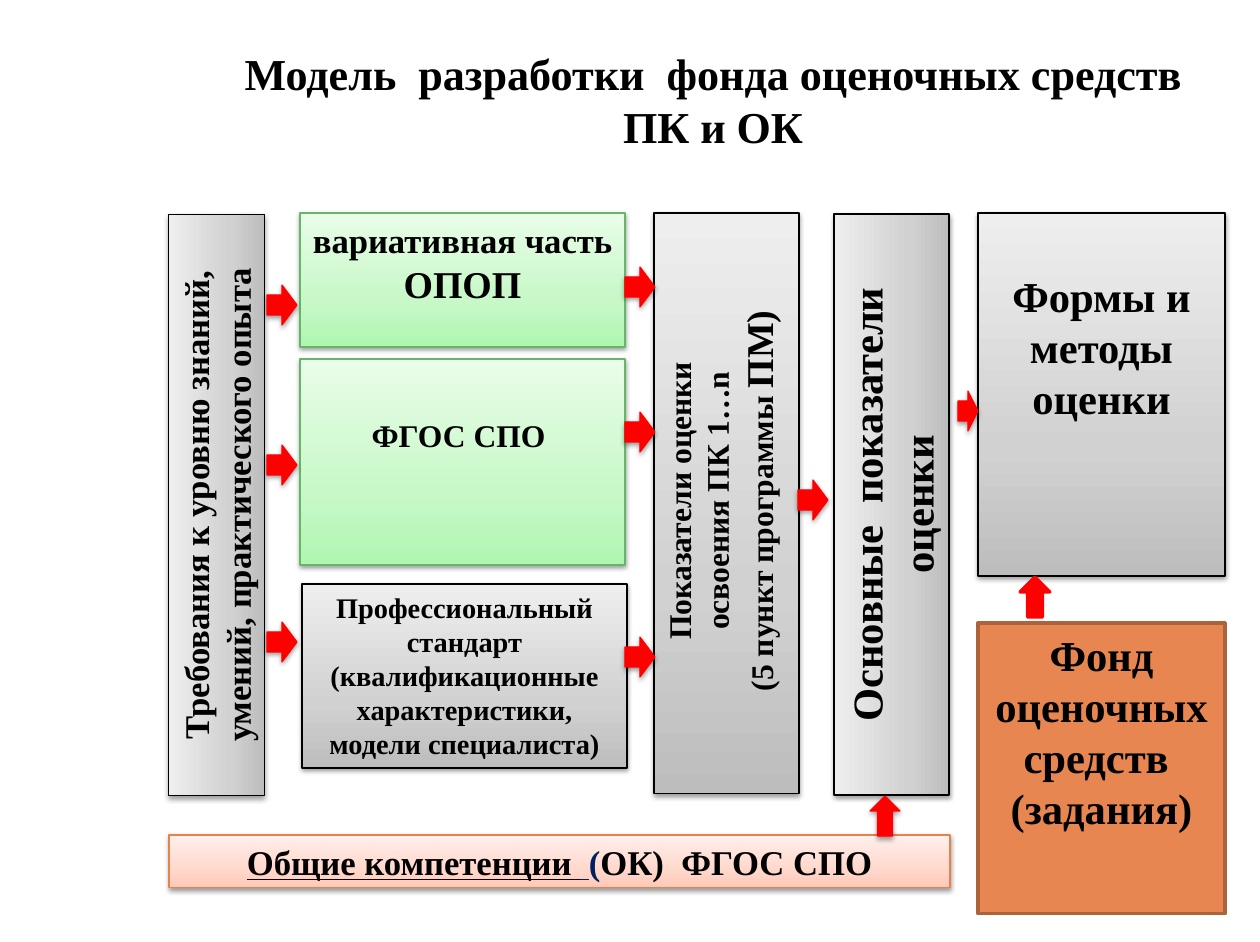
import copy

import pptx
import pptx.dml.color
import pptx.enum.shapes
import pptx.enum.text
import pptx.oxml
import pptx.oxml.ns
import pptx.util

PX = 8056
FONT = "Times New Roman"
COLORS = {
    "black": "000000", "navy": "002060", "red": "FF0000",
    "green line": "67B569", "peach line": "E7824C",
    "orange": "E88651", "orange line": "AC633C",
}
GRADIENTS = {
    "gray": ["BDBDBD", "D1D1D1", "EEEEEE"],
    "green": ["B0F6B1", "C8F8C8", "E9FDE9"],
    "peach": ["FFC8B7", "FFD8CC", "FFF0EC"],
}
SHADOW = (
    '<a:outerShdw xmlns:a="http://schemas.openxmlformats.org/drawingml/2006/main" '
    'blurRad="40000" dist="20000" dir="5400000" rotWithShape="0">'
    '<a:srgbClr val="000000"><a:alpha val="38000"/></a:srgbClr></a:outerShdw>'
)
Kind = pptx.enum.shapes.MSO_SHAPE


def rgb(name):
    return pptx.dml.color.RGBColor.from_string(COLORS[name])


def add_block(kind, place, line, line_width=0.75, shadow=True):
    """Add a preset shape at (left, top, width, height) px with its outline and shadow."""
    shape = slide.shapes.add_shape(kind, *[value * PX for value in place])
    shape.line.color.rgb = rgb(line)
    shape.line.width = pptx.util.Pt(line_width)
    shape.shadow.inherit = False
    if shadow:
        effects = shape._element.spPr.find(pptx.oxml.ns.qn("a:effectLst"))
        effects.append(pptx.oxml.parse_xml(SHADOW))
    return shape


presentation = pptx.Presentation()
presentation.slide_width = 1260 * PX
presentation.slide_height = 942 * PX
slide = presentation.slides.add_slide(presentation.slide_layouts[5])

title = slide.shapes.title
title.left, title.top, title.width, title.height = [value * PX for value in (195, 45, 1036, 109)]
title.text_frame.text = "Модель  разработки  фонда оценочных средств\vПК и ОК"
title.text_frame.auto_size = pptx.enum.text.MSO_AUTO_SIZE.NONE
title.text_frame.vertical_anchor = pptx.enum.text.MSO_ANCHOR.MIDDLE
title.text_frame.paragraphs[0].alignment = pptx.enum.text.PP_ALIGN.CENTER
for run in title.text_frame.paragraphs[0].runs:
    run.font.name = FONT
    run.font.size = pptx.util.Pt(28)
    run.font.bold = True
    run.font.color.rgb = rgb("black")
    effects = pptx.oxml.parse_xml(
        '<a:effectLst xmlns:a="http://schemas.openxmlformats.org/drawingml/2006/main"/>')
    effects.append(pptx.oxml.parse_xml(SHADOW))
    run.font._element.find(pptx.oxml.ns.qn("a:solidFill")).addnext(effects)

# name: place, fill, line, rotation, top margin, paragraphs of (text, size) runs
boxes = {
    "forms": ((978, 213, 247, 363), "gray", "black", 0, 57,
              [[("Формы и методы оценки", 27)]]),
    "standard": ((300, 359, 325, 206), "green", "green line", 0, 57,
                 [[("ФГОС СПО ", 20)]]),
    "profession": ((302, 584, 325, 184), "gray", "black", 0, 6,
                   [[("Профессиональный стандарт (квалификационные характеристики, "
                      "модели специалиста)", 18)]]),
    "variable part": ((300, 213, 325, 134), "green", "green line", 0, 6,
                      [[("вариативная часть ", 22), ("ОПОП", 24)]]),
    "requirements": ((-74, 457, 581, 96), "gray", "black", 270, 6,
                     [[("Требования к уровню знаний, умений, практического опыта", 22)]]),
    "competences": ((169, 835, 781, 53), "peach", "peach line", 0, 6,
                    [[("Общие компетенции ", 22), (" ", 22), ("(", 22),
                      ("ОК)  ФГОС СПО", 22)]]),
    "mastery": ((654, 213, 145, 581), "gray", "black", 0, 6,
                [[("Показатели оценки", 20)], [("освоения ПК 1…n", 20)],
                 [("(5 пункт программы ", 20), ("ПМ)", 24)]]),
    "indicators": ((601, 447, 581, 115), "gray", "black", 270, 6,
                   [[("Основные  показатели оценки", 27)]]),
    "fund": ((978, 623, 247, 291), "orange", "orange line", 0, 6,
             [[("Фонд оценочных средств ", 27)], [("(задания)", 27)]]),
}
shapes = {}
for name, (place, fill, line, rotation, margin_top, paragraphs) in boxes.items():
    flat = fill in COLORS
    shape = add_block(Kind.RECTANGLE, place, line, 2 if flat else 0.75, not flat)
    shapes[name] = shape
    shape.rotation = rotation
    if flat:
        shape.fill.solid()
        shape.fill.fore_color.rgb = rgb(fill)
    else:
        shape.fill.gradient()
        shape.fill.gradient_angle = 90
        stops = next(shape._element.spPr.iter(pptx.oxml.ns.qn("a:gsLst")))
        stops.insert(1, copy.deepcopy(stops[0]))
        for stop, color, position in zip(shape.fill.gradient_stops, GRADIENTS[fill], (0, 0.35, 1)):
            stop.color.rgb = pptx.dml.color.RGBColor.from_string(color)
            stop.position = position

    frame = shape.text_frame
    frame.word_wrap = True
    frame.vertical_anchor = pptx.enum.text.MSO_ANCHOR.TOP
    frame.margin_top = margin_top * PX
    for index, runs in enumerate(paragraphs):
        paragraph = frame.add_paragraph() if index else frame.paragraphs[0]
        paragraph.alignment = pptx.enum.text.PP_ALIGN.CENTER
        for text, size in runs:
            run = paragraph.add_run()
            run.text = text
            run.font.name = FONT
            run.font.size = pptx.util.Pt(size)
            run.font.bold = True
            run.font.color.rgb = rgb("black")

shapes["mastery"].text_frame._txBody.bodyPr.set("vert", "vert270")
heading, gap, bracket, _ = shapes["competences"].text_frame.paragraphs[0].runs
heading.font.underline = gap.font.underline = True
gap.font.color.rgb = bracket.font.color.rgb = rgb("navy")

right_arrows = [(267, top, 30) for top in (285, 445, 622)]
right_arrows += [(625, top, 30) for top in (267, 412, 637)]
right_arrows += [(798, 480, 30), (958, 391, 20)]
arrows = [(Kind.RIGHT_ARROW, (left, top, width, 40), 0.75, True)
          for left, top, width in right_arrows]
arrows += [(Kind.UP_ARROW, (870, 796, 30, 40), 0.75, True),
           (Kind.UP_ARROW, (1020, 577, 30, 40), 2, False)]
for kind, place, line_width, shadow in arrows:
    arrow = add_block(kind, place, "red", line_width, shadow)
    arrow.fill.solid()
    arrow.fill.fore_color.rgb = rgb("red")

presentation.save("out.pptx")
